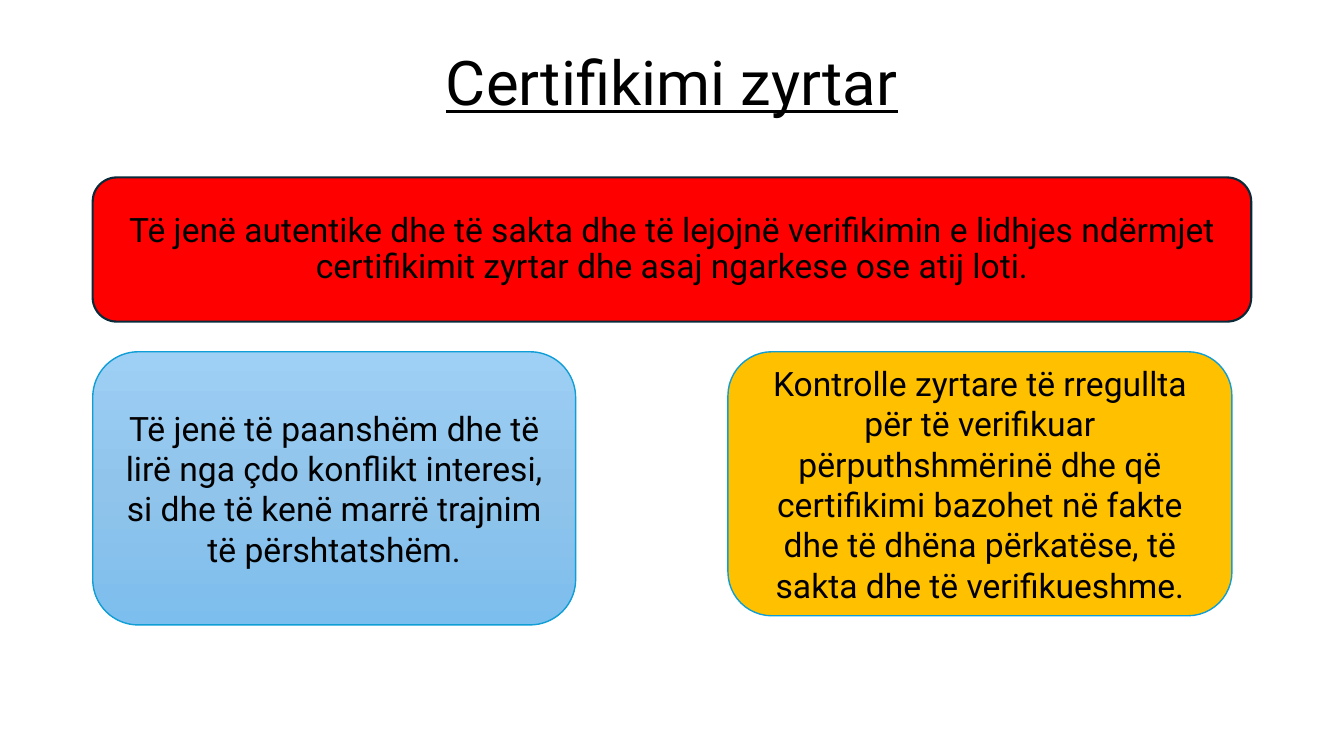
from copy import deepcopy

from pptx import Presentation
from pptx import util as u
from pptx.dml.color import RGBColor
from pptx.enum import shapes, text
from pptx.oxml.ns import qn


def color(code):
    return RGBColor.from_string(code)


class Sheet:
    """Holds the style and the current slide; lengths are percent of the slide's size."""

    font = "Roboto"
    ink = "000000"

    def __init__(self, deck):
        self.deck = deck
        self.page = deck.slides.add_slide(deck.slide_layouts[6])

    def place(self, left, top, width, height):
        across, down = self.deck.slide_width / 100, self.deck.slide_height / 100
        return [u.Emu(round(length)) for length in
                (left * across, top * down, width * across, height * down)]

    def label(self, box, words, size, spacing, underline=False):
        frame = box.text_frame
        frame.word_wrap = True
        frame.vertical_anchor = text.MSO_ANCHOR.MIDDLE
        frame.text = words
        para = frame.paragraphs[0]
        para.alignment = text.PP_ALIGN.CENTER
        para.line_spacing = spacing
        span = para.runs[0]
        span.font.name = self.font
        span.font.size = u.Pt(size)
        span.font.underline = underline
        span.font.color.rgb = color(self.ink)

    def title(self, area, words):
        box = self.page.shapes.add_textbox(*self.place(*area))
        self.label(box, words, 44, 0.9, underline=True)

    def card(self, area, words, fills, edge, weight=1, spacing=1.0):
        box = self.page.shapes.add_shape(
            shapes.MSO_SHAPE.ROUNDED_RECTANGLE, *self.place(*area))
        box.shadow.inherit = False
        if len(fills) == 1:
            box.fill.solid()
            box.fill.fore_color.rgb = color(fills[0])
        else:
            self.shade(box, fills)
        box.line.color.rgb = color(edge)
        box.line.width = u.Pt(weight)
        self.label(box, words, 24, spacing)

    def shade(self, box, fills):
        box.fill.gradient()
        box.fill.gradient_angle = 270
        stops = box._element.spPr.find(qn("a:gradFill")).find(qn("a:gsLst"))
        for _ in fills[2:]:
            stops.append(deepcopy(stops[0]))
        for index, stop in enumerate(box.fill.gradient_stops):
            stop.position = index / (len(fills) - 1)
            stop.color.rgb = color(fills[index])


def main():
    deck = Presentation()
    deck.slide_width, deck.slide_height = u.Inches(13.33), u.Inches(7.5)
    sheet = Sheet(deck)
    margin, full, lower = 6.9, 86.2, 46.53
    accent = "0F9ED5"

    sheet.title((margin, 5.33, full, 12), "Certifikimi zyrtar")
    sheet.card(
        (margin, 23.47, full, 19.07),
        "Të jenë autentike dhe të sakta dhe të lejojnë verifikimin e lidhjes "
        "ndërmjet certifikimit zyrtar dhe asaj ngarkese ose atij loti.",
        ["FF0000"], "092A39", weight=1.5, spacing=0.9)
    sheet.card(
        (margin, lower, 35.93, 36.13),
        "Të jenë të paanshëm dhe të lirë nga çdo konflikt interesi, "
        "si dhe të kenë marrë trajnim të përshtatshëm.",
        ["9ECFF5", "90C4EB", "7CBEED"], accent)
    sheet.card(
        (54.16, lower, 37.5, 34.93),
        "Kontrolle zyrtare të rregullta për të verifikuar përputhshmërinë "
        "dhe që certifikimi bazohet në fakte dhe të dhëna përkatëse, "
        "të sakta dhe të verifikueshme.",
        ["FFC000"], accent)
    deck.save("out.pptx")


if __name__ == "__main__":
    main()
